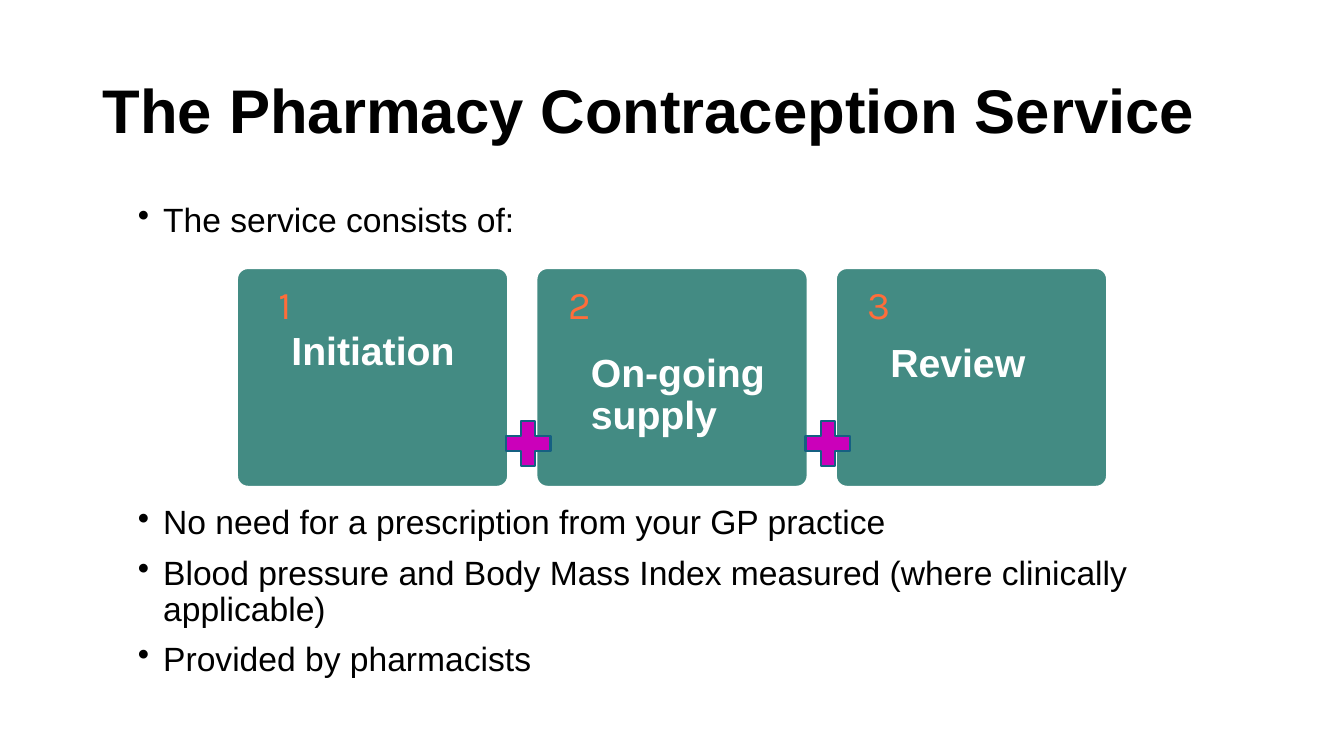
from lxml import etree
from pptx import Presentation
from pptx.dml.color import RGBColor
from pptx.enum.shapes import MSO_SHAPE
from pptx.enum.text import MSO_ANCHOR, PP_ALIGN
from pptx.oxml.ns import qn
from pptx.util import Inches, Pt

ROUNDED = MSO_SHAPE.ROUNDED_RECTANGLE
PLUS = MSO_SHAPE.MATH_PLUS
TOP, MIDDLE = MSO_ANCHOR.TOP, MSO_ANCHOR.MIDDLE
LEFT, RIGHT = PP_ALIGN.LEFT, PP_ALIGN.RIGHT

BLACK = RGBColor(0x00, 0x00, 0x00)
WHITE = RGBColor(0xFF, 0xFF, 0xFF)
TEAL = RGBColor(0x43, 0x8B, 0x83)
ORANGE = RGBColor(0xFF, 0x6D, 0x3A)
MAGENTA = RGBColor(0xCB, 0x00, 0xBA)
BLUE = RGBColor(0x15, 0x60, 0x82)

# Card grid, in inches
CARD_LEFT, CARD_TOP = 2.35, 2.66
CARD_WIDTH, CARD_HEIGHT = 2.69, 2.17
CARD_PITCH = 2.97
NUMBER_WIDTH = 0.54
LABEL_WIDTH = 2.01
PLUS_SIZE = 0.6

presentation = Presentation()
presentation.slide_width = Inches(13.33)
presentation.slide_height = Inches(7.5)
slide = presentation.slides.add_slide(presentation.slide_layouts[6])


def add_text(lines, left, top, width, height, *, size, color=BLACK, font="Arial",
             bold=False, align=LEFT, anchor=TOP, insets=(0.1, 0.05, 0.1, 0.05),
             bullets=False):
    box = slide.shapes.add_textbox(Inches(left), Inches(top), Inches(width), Inches(height))
    frame = box.text_frame
    frame.word_wrap = True
    frame.vertical_anchor = anchor
    (frame.margin_left, frame.margin_top,
     frame.margin_right, frame.margin_bottom) = [Inches(inset) for inset in insets]
    frame.text = "\n".join(lines)
    for paragraph in frame.paragraphs:
        paragraph.alignment = align
        paragraph.line_spacing = 0.9
        paragraph.font.size = Pt(size)
        paragraph.font.name = font
        paragraph.font.bold = bold
        paragraph.font.color.rgb = color
        if bullets:
            paragraph.space_before = Pt(10)
            properties = paragraph._p.get_or_add_pPr()
            properties.set("marL", str(Inches(0.25)))
            properties.set("indent", str(-Inches(0.25)))
            bullet = etree.Element(qn("a:buChar"), char="•")
            properties.find(qn("a:spcBef")).addnext(bullet)


def add_filled_shape(kind, left, top, width, height, fill, line):
    shape = slide.shapes.add_shape(kind, Inches(left), Inches(top), Inches(width), Inches(height))
    shape.shadow.inherit = False
    shape.fill.solid()
    shape.fill.fore_color.rgb = fill
    shape.line.color.rgb = line
    shape.line.width = Pt(1.5)
    return shape


# Title
add_text(["The Pharmacy Contraception Service"], 0.92, 0.4, 11.5, 1.45,
         size=44, bold=True, anchor=MIDDLE)

# Bullets above and below the cards
add_text(["The service consists of:"], 1.27, 1.97, 10.79, 0.5, size=24, bullets=True)
add_text(["No need for a prescription from your GP practice",
          "Blood pressure and Body Mass Index measured (where clinically applicable)",
          "Provided by pharmacists"],
         1.27, 4.97, 10.79, 1.95, size=24, bullets=True)

# Numbered cards, each label with its own distance from the card's top
cards = [("Initiation", 0.83), ("On-going supply", 0.85), ("Review", 1.07)]
for index, (label, label_inset) in enumerate(cards):
    left = CARD_LEFT + index * CARD_PITCH
    card = add_filled_shape(ROUNDED, left, CARD_TOP, CARD_WIDTH, CARD_HEIGHT, TEAL, WHITE)
    card.adjustments[0] = 0.05
    add_text([str(index + 1)], left, CARD_TOP, NUMBER_WIDTH, 0.7,
             size=28, color=ORANGE, font="Karla", align=RIGHT, insets=(0, 0.17, 0, 0))
    add_text([label], left + NUMBER_WIDTH, CARD_TOP, LABEL_WIDTH, CARD_HEIGHT,
             size=28, color=WHITE, bold=True, insets=(0, label_inset, 0, 0))

# Plus signs between neighbouring cards
for index in range(len(cards) - 1):
    add_filled_shape(PLUS, 4.94 + index * CARD_PITCH, 4.1, PLUS_SIZE, PLUS_SIZE, MAGENTA, BLUE)

presentation.save("out.pptx")
